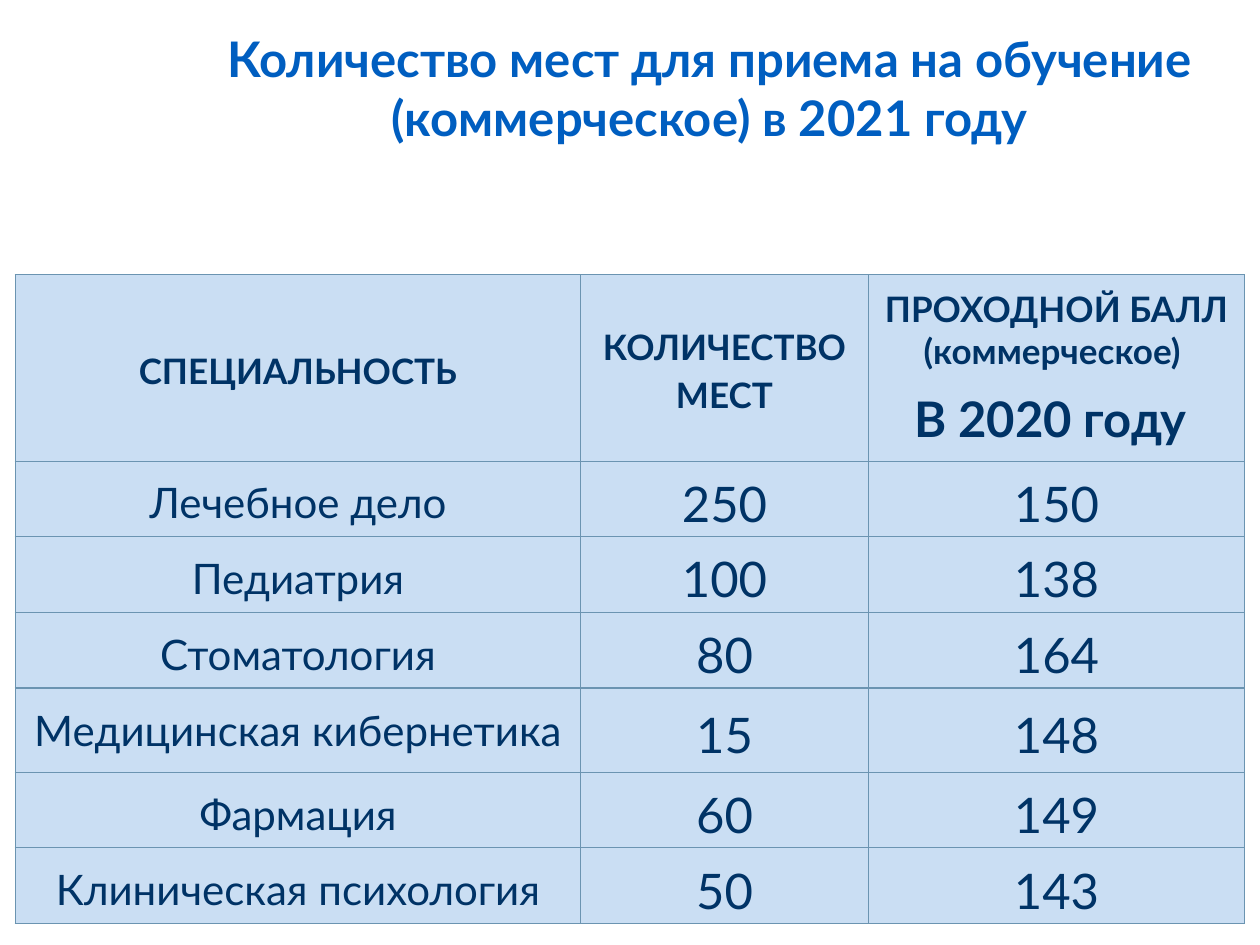
from lxml import etree
from pptx import Presentation
from pptx import util as u
from pptx.dml.color import RGBColor
from pptx.enum import text
from pptx.oxml.ns import qn

BLUE = RGBColor(0x00, 0x5E, 0xC0)
NAVY = RGBColor(0x00, 0x33, 0x66)
PALE = RGBColor(0xCA, 0xDE, 0xF3)
EDGE = RGBColor(0x6B, 0x94, 0xB1)
FONT = "Lato"

TITLE = "Количество мест для приема на обучение (коммерческое) в 2021 году"
COLS = [4.49, 2.28, 2.99]
ROWS = [1.48, 0.6, 0.6, 0.6, 0.67, 0.6, 0.6]
HEAD = ["СПЕЦИАЛЬНОСТЬ", "КОЛИЧЕСТВО МЕСТ"]
SCORE = ["ПРОХОДНОЙ БАЛЛ (коммерческое) ", "В 2020 году "]
DATA = [
    ("Лечебное дело", 250, 150),
    ("Педиатрия", 100, 138),
    ("Стоматология", 80, 164),
    ("Медицинская кибернетика", 15, 148),
    ("Фармация", 60, 149),
    ("Клиническая психология", 50, 143),
]


def write(par, words, size, color=NAVY, bold=False, lines=None, after=None):
    """Put one centred, formatted run into a paragraph."""
    par.alignment = text.PP_ALIGN.CENTER
    if lines:
        par.line_spacing = lines
    if after is not None:
        par.space_after = u.Pt(after)
    run = par.add_run()
    run.text = words
    font = run.font
    font.name, font.size, font.bold = FONT, u.Pt(size), bold
    font.color.rgb = color


class Deck:
    """Holds the presentation, its style and the current slide."""

    def __init__(self, wide, high):
        self.prs = Presentation()
        self.prs.slide_width = u.Inches(wide)
        self.prs.slide_height = u.Inches(high)
        self.slide = self.prs.slides.add_slide(self.prs.slide_layouts[5])

    def title(self, words, left, top, wide, high):
        box = self.slide.shapes.title
        box.left, box.top = u.Inches(left), u.Inches(top)
        box.width, box.height = u.Inches(wide), u.Inches(high)
        frame = box.text_frame
        frame.word_wrap = True
        frame.auto_size = text.MSO_AUTO_SIZE.NONE
        frame.vertical_anchor = text.MSO_ANCHOR.MIDDLE
        write(frame.paragraphs[0], words, 28, BLUE, bold=True)

    def table(self, left, top, cols, rows):
        grid = self.slide.shapes.add_table(
            len(rows), len(cols), u.Inches(left), u.Inches(top),
            u.Inches(sum(cols)), u.Inches(sum(rows))).table
        for col, wide in zip(grid.columns, cols):
            col.width = u.Inches(wide)
        for row, high in zip(grid.rows, rows):
            row.height = u.Inches(high)
        for cell in grid.iter_cells():
            self.dress(cell)
        return grid

    def dress(self, cell):
        cell.margin_left = cell.margin_right = u.Inches(0.07)
        cell.margin_top = cell.margin_bottom = 0
        cell.vertical_anchor = text.MSO_ANCHOR.MIDDLE
        # Borders come before the fill in the cell properties
        props = cell._tc.get_or_add_tcPr()
        for side in ("a:lnL", "a:lnR", "a:lnT", "a:lnB"):
            line = etree.SubElement(props, qn(side), w=str(u.Pt(0.75)))
            solid = etree.SubElement(line, qn("a:solidFill"))
            etree.SubElement(solid, qn("a:srgbClr"), val=str(EDGE))
        cell.fill.solid()
        cell.fill.fore_color.rgb = PALE

    def fill(self, cell, words, size, bold=False, lines=1.15):
        write(cell.text_frame.paragraphs[0], words, size,
              bold=bold, lines=lines, after=10)


def main():
    deck = Deck(10, 7.5)
    grid = deck.table(0.12, 2.18, COLS, ROWS)

    # Header row
    for col, words in enumerate(HEAD):
        deck.fill(grid.cell(0, col), words, 20, bold=True)
    last = grid.cell(0, 2)
    deck.fill(last, SCORE[0], 20, bold=True, lines=None)
    write(last.text_frame.add_paragraph(), SCORE[1], 28, bold=True, after=10)

    # One row per speciality; the taller row has single line spacing
    for row, (name, *counts) in enumerate(DATA, 1):
        lines = 1.15 if ROWS[row] == 0.6 else None
        deck.fill(grid.cell(row, 0), name, 24, lines=lines)
        for col, count in enumerate(counts, 1):
            deck.fill(grid.cell(row, col), str(count), 28)

    deck.title(TITLE, 1.38, 0, 8.5, 1.39)
    deck.prs.save("out.pptx")


if __name__ == "__main__":
    main()
